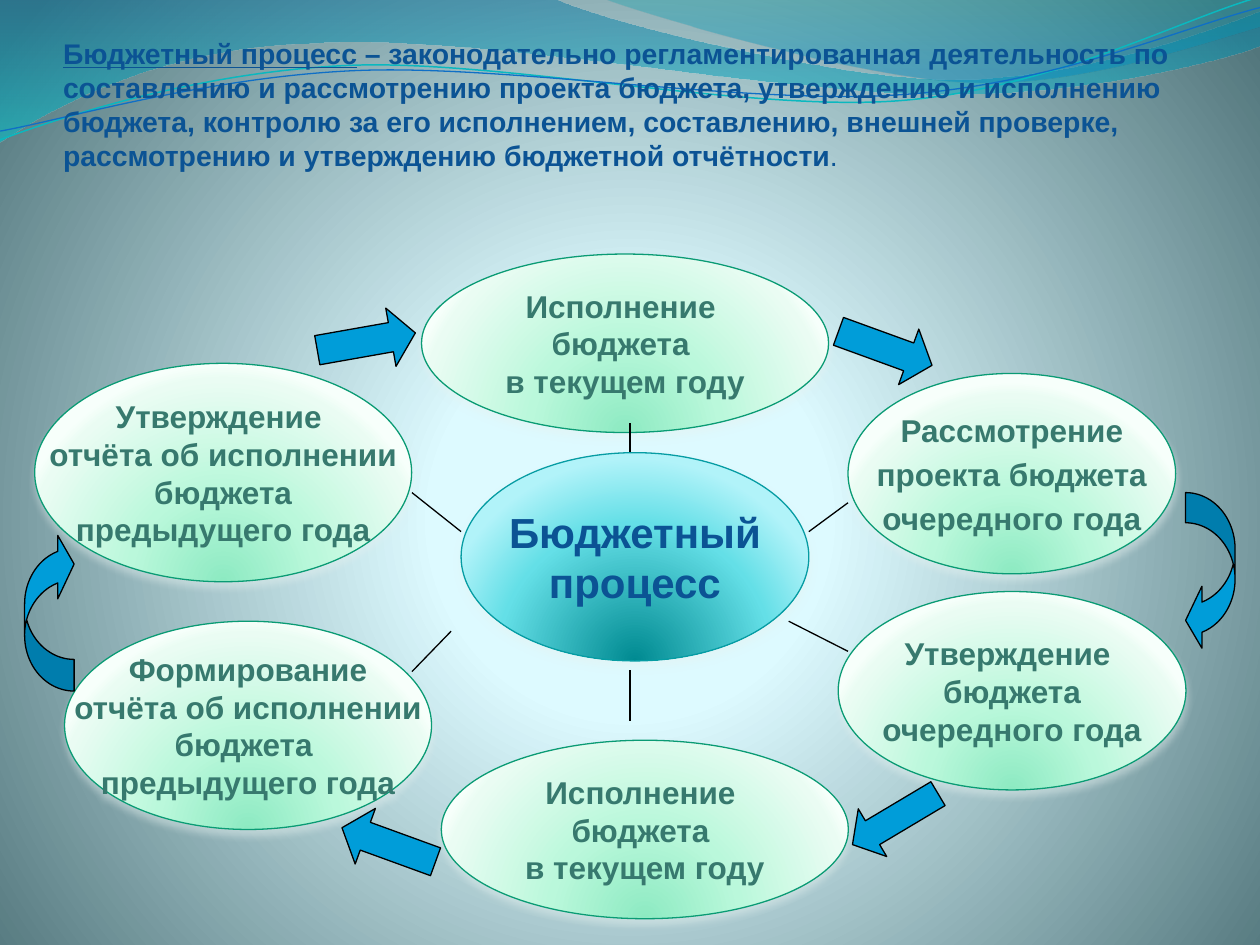
from lxml.etree import SubElement
from pptx import Presentation
from pptx.dml.color import RGBColor
from pptx.enum.shapes import MSO_CONNECTOR, MSO_SHAPE
from pptx.enum.text import MSO_ANCHOR, PP_ALIGN
from pptx.oxml.ns import qn
from pptx.util import Pt

COLORS = {
    "title": "0B5394", "label": "37796E", "arrow": "009DD9", "black": "000000",
    "green": "0A9B74", "teal": "069CA3", "aqua": "0AB8BF", "blue": "0F6FC6",
    "glow": "E6F2F0",
}
# Gradient stops: position, colour, opacity in percent
STOPS = {
    "back": [(0, "DEFBFF", 100), (25, "DDFAFF", 100), (100, "52767C", 100)],
    "green": [(0, "8DEAC2", 100), (43, "BAF8DB", 100), (93, "EAFCF3", 100), (100, "F7FFFB", 100)],
    "teal": [(0, "008A91", 100), (68, "64DFE7", 100), (100, "B1F3F9", 100)],
    "wide wave": [(0, "0074A1", 45), (100, "00C6CF", 55)],
    "right wave": [(0, "00A1A9", 30), (80, "008BBF", 45)],
}


def rgb(name):
    return RGBColor.from_string(COLORS[name])


def add(parent, tag, **attrs):
    return SubElement(parent, qn(tag), {k: str(v) for k, v in attrs.items()})


class Deck:
    font = "Arial"
    thin = 0.75

    def __init__(self, wide, high):
        self.prs = Presentation()
        self.prs.slide_width, self.prs.slide_height = Pt(wide), Pt(high)
        self.slide = self.prs.slides.add_slide(self.prs.slide_layouts[6])
        self.shapes = self.slide.shapes

    def blend(self, fill, parent, name, rect=None):
        """Gradient fill: radial with a focus rect, else top to bottom."""
        fill.solid()
        old = parent.find(qn("a:solidFill"))
        grad = add(parent, "a:gradFill", rotWithShape=1)
        stops = add(grad, "a:gsLst")
        for pos, color, alpha in STOPS[name]:
            tint = add(add(stops, "a:gs", pos=pos * 1000), "a:srgbClr", val=color)
            if alpha < 100:
                add(tint, "a:alpha", val=alpha * 1000)
        if rect:
            sides = {k: v * 1000 for k, v in zip("ltrb", rect)}
            add(add(grad, "a:path", path="circle"), "a:fillToRect", **sides)
        else:
            add(grad, "a:lin", ang=90 * 60000, scaled=0)
        parent.replace(old, grad)

    def back(self):
        fill = self.slide.background.fill
        fill.solid()
        frame = self.slide.element.find(".//" + qn("p:bgPr"))
        self.blend(fill, frame, "back", (10, 110, 10, 100))

    def edge(self, shape, color, width=thin):
        shape.line.color.rgb = rgb(color)
        shape.line.width = Pt(width)

    def wave(self, start, steps, grad=None, color=None, width=thin):
        """Steps of 2 numbers are lines, steps of 6 are cubic curves."""
        pts = [(Pt(x), Pt(y)) for s in steps for x, y in zip(s[::2], s[1::2])]
        pen = self.shapes.build_freeform(Pt(start[0]), Pt(start[1]))
        pen.add_line_segments(pts, close=bool(grad))
        shape = pen.convert_to_shape()
        # Join each three points of a curve into one cubic segment
        legs = iter(shape.element.findall(".//" + qn("a:lnTo")))
        for step in steps:
            group = [next(legs) for _ in step[::2]]
            if len(group) == 3:
                curve = add(group[0].getparent(), "a:cubicBezTo")
                group[0].addprevious(curve)
                for leg in group:
                    curve.append(leg[0])
                    leg.getparent().remove(leg)
        shape.shadow.inherit = False
        if grad:
            self.blend(shape.fill, shape.element.spPr, grad)
            shape.line.fill.background()
        else:
            shape.fill.background()
            self.edge(shape, color, width)

    def run(self, para, text, size, color, bold=True, under=False):
        run = para.add_run()
        run.text = text
        font = run.font
        font.name, font.size, font.bold = self.font, Pt(size), bold
        font.underline = under
        font.color.rgb = rgb(color)

    def title(self, box, parts):
        frame = self.shapes.add_textbox(*map(Pt, box)).text_frame
        frame.word_wrap = True
        frame.vertical_anchor = MSO_ANCHOR.BOTTOM
        frame.margin_left = frame.margin_right = frame.margin_top = 0
        frame.margin_bottom = Pt(12.6)
        for text, bold, under in parts:
            self.run(frame.paragraphs[0], text, 16.2, "title", bold, under)

    def oval(self, box, lines, look="green", size=18, color="label", gap=0):
        shape = self.shapes.add_shape(MSO_SHAPE.OVAL, *map(Pt, box))
        self.blend(shape.fill, shape.element.spPr, look, (50, 130, 50, -30))
        self.edge(shape, look)
        # Soft glow below
        shape.shadow.inherit = False
        glow = add(shape.element.spPr.find(qn("a:effectLst")), "a:outerShdw",
                   blurRad=Pt(4.5), dist=Pt(3), dir=90 * 60000, rotWithShape=0)
        tint = add(glow, "a:srgbClr", val=COLORS["glow"])
        add(tint, "a:alpha", val=48000)
        # Label
        frame = shape.text_frame
        frame.word_wrap = False
        frame.vertical_anchor = MSO_ANCHOR.MIDDLE
        for i, line in enumerate(lines):
            para = frame.add_paragraph() if i else frame.paragraphs[0]
            para.alignment = PP_ALIGN.CENTER
            para.space_before = Pt(gap)
            self.run(para, line, size, color)

    def arrow(self, box, turn=0, kind=MSO_SHAPE.RIGHT_ARROW, bends=(0.5, 0.42)):
        shape = self.shapes.add_shape(kind, *map(Pt, box))
        shape.rotation = turn
        for i, bend in enumerate(bends):
            shape.adjustments[i] = bend
        shape.shadow.inherit = False
        shape.fill.solid()
        shape.fill.fore_color.rgb = rgb("arrow")
        self.edge(shape, "black")

    def link(self, ends):
        line = self.shapes.add_connector(MSO_CONNECTOR.STRAIGHT, *map(Pt, ends))
        self.edge(line, "black")
        add(line.element.spPr, "a:effectLst")


def main():
    deck = Deck(720, 540)

    # Backdrop and waves
    deck.back()
    deck.wave((0, 0), [
        (316.8, -0.7), (342.7, 12.2, 478.1, 45.4, 545.8, 45.4),
        (614.2, 45.4, 689.8, 18.7, 720, 6.5), (720.7, 25.9),
        (707.8, 31.7, 626.4, 54.7, 537.1, 54), (447.8, 54, 275, 20.2, 185, 24.5),
        (92.9, 25.9, 33.1, 59.8, -0.7, 81.4)], "wide wave")
    deck.wave((344.9, -0.7), [
        (366.5, 7.9, 491, 44.6, 553.7, 46.8),
        (616.3, 49.7, 691.9, 23, 720, 15.1), (720, 0)], "right wave")
    deck.wave((0, 79.9), [
        (34.6, 67, 113.8, 41, 199.4, 37.4), (284.4, 33.8, 427, 64.1, 513.4, 57.6),
        (599.8, 51.1, 675.4, 10.8, 718.6, -1.4)], color="aqua", width=0.85)
    deck.wave((0, 74.9), [
        (33.8, 69.1, 118.1, 43.9, 203.8, 40.3), (290.2, 36.7, 429.8, 60.5, 516.2, 54),
        (601.9, 48.2, 677.5, 15.1, 720, 4.3)], color="blue")

    # Definition
    deck.title((36, 26, 647.3, 85), [
        ("Бюджетный процесс", True, True),
        (" – законодательно регламентированная деятельность по составлению и "
         "рассмотрению проекта бюджета, утверждению и исполнению бюджета, "
         "контролю за его исполнением, составлению, внешней проверке, "
         "рассмотрению и утверждению бюджетной отчётности", True, False),
        (".", False, False)])

    # Stages around the centre
    current = ["Исполнение ", "бюджета ", "в текущем году"]
    about, past = "отчёта об исполнении", "предыдущего года"
    deck.oval((484.6, 213.4, 187.2, 114.5),
              ["Рассмотрение", "проекта бюджета", "очередного года"], gap=3.6)
    deck.oval((479, 338, 198.7, 113.4), ["Утверждение ", "бюджета", "очередного года"])
    for left, top in ((252.2, 423), (240.9, 145.2)):
        deck.oval((left, top, 232.6, 102), current)
    deck.oval((263.5, 258.7, 198.7, 119), ["Бюджетный", "процесс"], "teal", 24, "title")
    deck.oval((19.8, 207.6, 215.4, 124.8), ["Утверждение ", about, " бюджета ", past])
    deck.oval((36.9, 355, 209.7, 119), ["Формирование", about, "бюджета ", past])

    # Arrows round the cycle
    for left, top, high, turn in ((180.9, 178.3, 33.8, 350), (477.4, 182.2, 33.8, 20),
                                  (483.1, 452.2, 31.7, 149.2), (193.7, 465.8, 33.8, 200)):
        deck.arrow((left, top, 56.9, high), turn)
    deck.arrow((677.5, 281.5, 28.3, 90.7), 0, MSO_SHAPE.CURVED_LEFT_ARROW, (0.61, 1.25, 0.33))
    deck.arrow((-17.1, 335.4, 90.7, 28.3), 270, MSO_SHAPE.CURVED_DOWN_ARROW, (0.64, 1.28, 0.33))

    # Links to the centre
    for ends in ((360, 383, 360, 411.8), (257.8, 360.7, 235.4, 383.8),
                 (235.4, 281.5, 263.5, 303.8), (360, 241.9, 360, 258.5),
                 (462.2, 303.8, 484.6, 287.3), (450.7, 355, 484.6, 372.2)):
        deck.link(ends)

    deck.prs.save("out.pptx")


if __name__ == "__main__":
    main()
